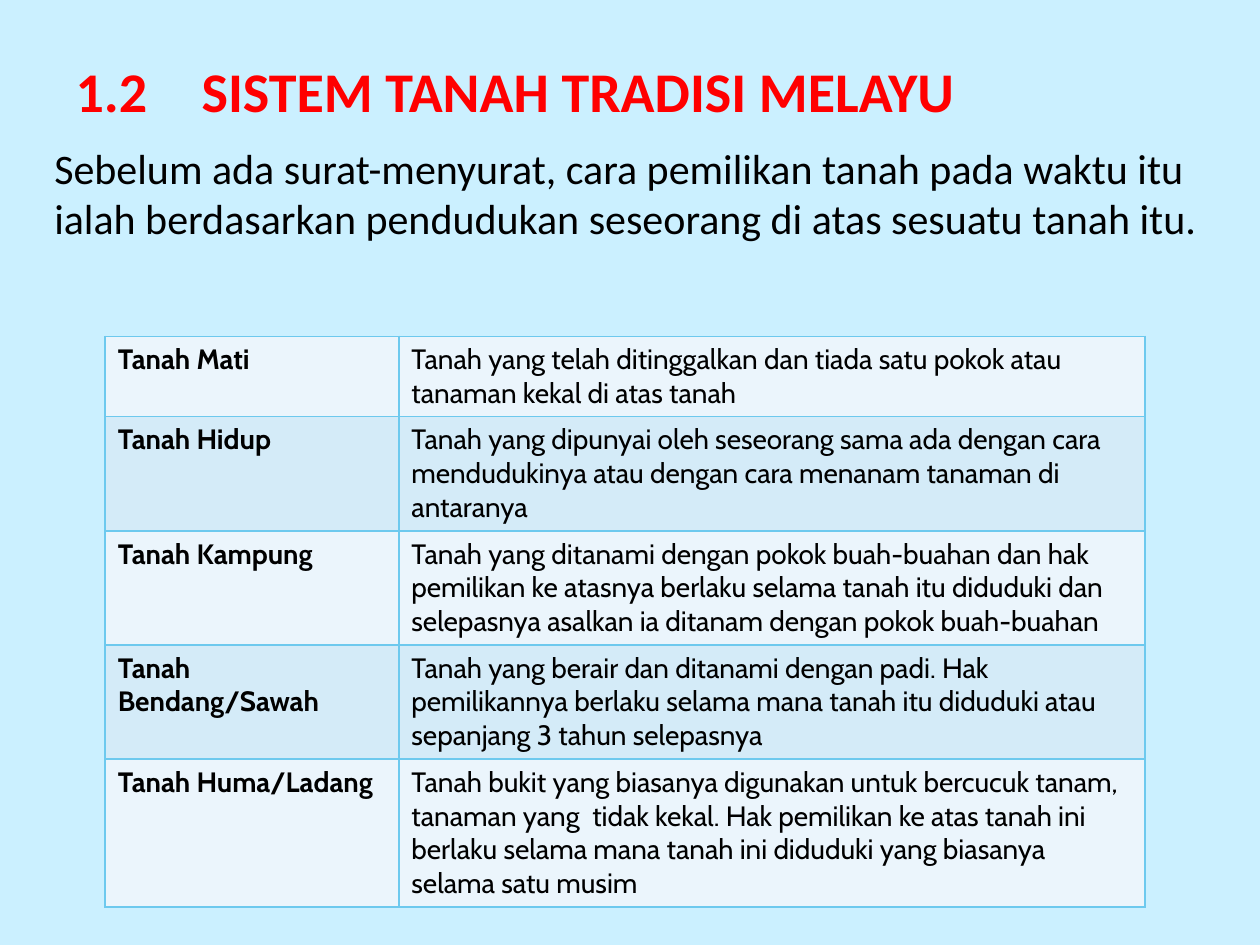
"""Build a slide on the traditional Malay land system."""
from dataclasses import dataclass

import lxml.etree
import pptx
import pptx.dml.color
import pptx.enum.text
import pptx.oxml.ns
import pptx.util
from pptx.util import Cm

BORDER = "6DC9EE"
BANDS = ("EBF5FC", "D4EBF8")
LINE_CM, PADDING_CM = 0.68, 0.26


@dataclass
class LandType:
    name: str
    meaning: str
    lines: int


LAND_TYPES = [
    LandType("Tanah Mati", "Tanah yang telah ditinggalkan dan tiada satu pokok atau "
             "tanaman kekal di atas tanah", 2),
    LandType("Tanah Hidup", "Tanah yang dipunyai oleh seseorang sama ada dengan cara "
             "mendudukinya atau dengan cara menanam tanaman di antaranya", 3),
    LandType("Tanah Kampung", "Tanah yang ditanami dengan pokok buah-buahan dan hak "
             "pemilikan ke atasnya berlaku selama tanah itu diduduki dan selepasnya "
             "asalkan ia ditanam dengan pokok buah-buahan", 3),
    LandType("Tanah Bendang/Sawah", "Tanah yang berair dan ditanami dengan padi. Hak "
             "pemilikannya berlaku selama mana tanah itu diduduki atau sepanjang 3 tahun "
             "selepasnya", 3),
    LandType("Tanah Huma/Ladang", "Tanah bukit yang biasanya digunakan untuk bercucuk "
             "tanam, tanaman yang  tidak kekal. Hak pemilikan ke atas tanah ini berlaku "
             "selama mana tanah ini diduduki yang biasanya selama satu musim", 4),
]


def set_color(target, color: str) -> None:
    target.rgb = pptx.dml.color.RGBColor.from_string(color)


def set_fill(fill, color: str) -> None:
    fill.solid()
    set_color(fill.fore_color, color)


def write(tf, text: str, *, size: int, font: str, color: str = "000000",
          bold: bool = False) -> None:
    p = tf.paragraphs[0]
    p.alignment = pptx.enum.text.PP_ALIGN.LEFT
    p.space_before = pptx.util.Pt(0)
    r = p.add_run()
    r.text = text
    r.font.size = pptx.util.Pt(size)
    r.font.name = font
    r.font.bold = bold
    set_color(r.font.color, color)


def place(sp, left: float, top: float, width: float, height: float) -> None:
    sp.left, sp.top, sp.width, sp.height = map(Cm, (left, top, width, height))
    sp.text_frame.word_wrap = True
    sp.text_frame.auto_size = pptx.enum.text.MSO_AUTO_SIZE.NONE


def remove_bullet(p) -> None:
    pPr = p._p.get_or_add_pPr()
    pPr.set("marL", "0")
    pPr.set("indent", "0")
    lxml.etree.SubElement(pPr, pptx.oxml.ns.qn("a:buNone"))


def add_borders(cell, color: str) -> None:
    tcPr = cell._tc.get_or_add_tcPr()
    qn = pptx.oxml.ns.qn
    for side in ("lnL", "lnR", "lnT", "lnB"):
        ln = lxml.etree.SubElement(tcPr, qn(f"a:{side}"), w=str(pptx.util.Pt(1)))
        fill = lxml.etree.SubElement(ln, qn("a:solidFill"))
        lxml.etree.SubElement(fill, qn("a:srgbClr"), val=color)


def add_land_table(s, land_types: list[LandType]) -> None:
    heights = [Cm(PADDING_CM + LINE_CM * land.lines) for land in land_types]
    widths = (Cm(5.92), Cm(15.04))
    table = s.shapes.add_table(len(land_types), 2, Cm(2.12), Cm(6.78),
                               sum(widths), sum(heights)).table
    table.first_row = table.horz_banding = False
    for column, width in zip(table.columns, widths):
        column.width = width
    for i, land in enumerate(land_types):
        table.rows[i].height = heights[i]
        for j, text in enumerate((land.name, land.meaning)):
            cell = table.cell(i, j)
            add_borders(cell, BORDER)
            set_fill(cell.fill, BANDS[i % 2])
            write(cell.text_frame, text, size=16, font="Cabin", bold=j == 0)


def main() -> None:
    prs = pptx.Presentation()
    prs.slide_width, prs.slide_height = Cm(25.4), Cm(19.05)
    s = prs.slides.add_slide(prs.slide_layouts[1])
    set_fill(s.background.fill, "CBF0FF")

    title, body = s.placeholders
    place(title, 1.27, 0.64, 22.86, 2.34)
    title.text_frame.vertical_anchor = pptx.enum.text.MSO_ANCHOR.MIDDLE
    write(title.text_frame, "1.2\tSISTEM TANAH TRADISI MELAYU", size=32,
          font="Calibri", color="FF0000", bold=True)

    place(body, 0.84, 2.74, 23.93, 14.81)
    remove_bullet(body.text_frame.paragraphs[0])
    write(body.text_frame, "Sebelum ada surat-menyurat, cara pemilikan tanah pada waktu "
          "itu ialah berdasarkan pendudukan seseorang di atas sesuatu tanah itu.",
          size=24, font="Calibri")

    add_land_table(s, LAND_TYPES)
    prs.save("out.pptx")


if __name__ == "__main__":
    main()
